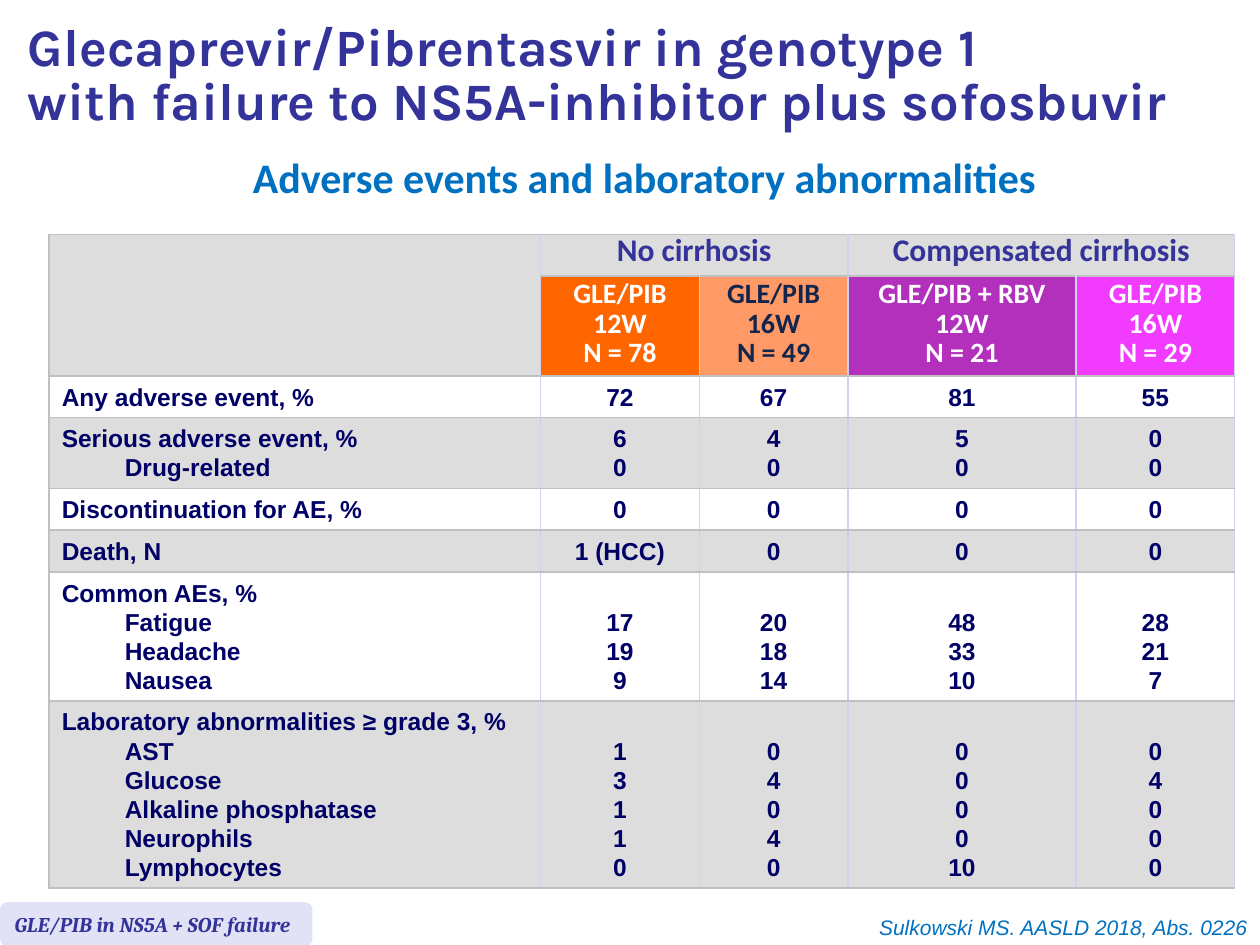
from dataclasses import dataclass

from lxml import etree
from pptx import Presentation
from pptx.dml.color import RGBColor
from pptx.enum.shapes import MSO_SHAPE
from pptx.enum.text import MSO_ANCHOR, MSO_AUTO_SIZE, PP_ALIGN
from pptx.oxml.ns import qn
from pptx.util import Inches, Pt

LEFT, CENTER, RIGHT = PP_ALIGN.LEFT, PP_ALIGN.CENTER, PP_ALIGN.RIGHT
MIDDLE, BOTTOM = MSO_ANCHOR.MIDDLE, MSO_ANCHOR.BOTTOM
TITLE_ONLY = 5


@dataclass(frozen=True)
class TextStyle:
    font: str
    size: int
    color: str
    bold: bool = True
    italic: bool = False


class Theme:
    title = TextStyle("Karla", 30, "333399")
    subtitle = TextStyle("Calibri", 24, "0070C0")
    group = TextStyle("Calibri", 18, "333399")
    arm_light = TextStyle("Calibri", 16, "FFFFFF")
    arm_dark = TextStyle("Calibri", 16, "12254C")
    body = TextStyle("Arial", 14, "000066")
    tag = TextStyle("Cambria", 12, "333399", italic=True)
    citation = TextStyle("Arial", 12, "0070C0", bold=False, italic=True)
    white, gray, tag_fill = "FFFFFF", "DDDDDD", "E2E2F6"
    row_line, column_line = "C0C0C0", "D0D0F0"
    line_spacing = Pt(16.6)


TITLE = "Glecaprevir/Pibrentasvir in genotype 1 \vwith failure to NS5A-inhibitor plus sofosbuvir"
SUBTITLE = "Adverse events and laboratory abnormalities"
TAG = "GLE/PIB in NS5A + SOF failure"
CITATION = "Sulkowski MS. AASLD 2018, Abs. 0226"

GROUPS = ["No cirrhosis", "Compensated cirrhosis"]
ARMS = [
    (["GLE/PIB", "12W", "N = 78"], "FF6600", Theme.arm_light),
    (["GLE/PIB", "16W", "N = 49"], "FF9966", Theme.arm_dark),
    (["GLE/PIB + RBV", "12W", "N = 21"], "B230BC", Theme.arm_light),
    (["GLE/PIB", "16W", "N = 29"], "F13BFE", Theme.arm_light),
]
# Each row: heading, indented labels, one list of values per arm
ROWS = [
    ("Any adverse event, %", [], [["72"], ["67"], ["81"], ["55"]]),
    ("Serious adverse event, %", ["Drug-related"],
     [["6", "0"], ["4", "0"], ["5", "0"], ["0", "0"]]),
    ("Discontinuation for AE, %", [], [["0"], ["0"], ["0"], ["0"]]),
    ("Death, N", [], [["1 (HCC)"], ["0"], ["0"], ["0"]]),
    ("Common AEs, %", ["Fatigue", "Headache", "Nausea"],
     [["17", "19", "9"], ["20", "18", "14"], ["48", "33", "10"], ["28", "21", "7"]]),
    ("Laboratory abnormalities ≥ grade 3, %",
     ["AST", "Glucose", "Alkaline phosphatase", "Neurophils", "Lymphocytes"],
     [["1", "3", "1", "1", "0"], ["0", "4", "0", "4", "0"],
      ["0", "0", "0", "0", "10"], ["0", "4", "0", "0", "0"]]),
]
COLUMN_WIDTHS = [3.9, 1.26, 1.18, 1.81, 1.26]


def color(value):
    return RGBColor.from_string(value)


def write(text_frame, lines, style, alignment, spacing=None):
    text_frame.text = "\n".join(lines)
    for paragraph in text_frame.paragraphs:
        paragraph.alignment = alignment
        paragraph.line_spacing = spacing
        for run in paragraph.runs:
            run.font.name = style.font
            run.font.size = Pt(style.size)
            run.font.bold = style.bold
            run.font.italic = style.italic
            run.font.color.rgb = color(style.color)


def style_cell(cell, fill, first_column):
    """Borders go in before the fill, as the schema orders them."""
    properties = cell._tc.get_or_add_tcPr()
    left = Theme.row_line if first_column else Theme.column_line
    borders = {"L": left, "R": Theme.column_line, "T": Theme.row_line, "B": Theme.row_line}
    for side, line_color in borders.items():
        line = etree.SubElement(properties, qn(f"a:ln{side}"), w=str(Pt(1)))
        solid = etree.SubElement(line, qn("a:solidFill"))
        etree.SubElement(solid, qn("a:srgbClr"), val=line_color)
    cell.fill.solid()
    cell.fill.fore_color.rgb = color(fill)


def fill_cell(cell, lines, style, alignment=CENTER, anchor=MIDDLE):
    write(cell.text_frame, lines, style, alignment, Theme.line_spacing)
    cell.vertical_anchor = anchor


def add_events_table(slide):
    line_counts = [1, 3] + [1 + len(labels) for _, labels, _ in ROWS]
    heights = [Theme.line_spacing * count + Inches(0.1) for count in line_counts]
    frame = slide.shapes.add_table(
        len(heights), len(COLUMN_WIDTHS), Inches(0.39), Inches(1.86),
        Inches(sum(COLUMN_WIDTHS)), sum(heights))
    table = frame.table
    table.first_row = table.horz_banding = False
    for column, width in zip(table.columns, COLUMN_WIDTHS):
        column.width = Inches(width)
    for row, height in zip(table.rows, heights):
        row.height = height

    arm_fills = [Theme.gray] + [fill for _, fill, _ in ARMS]
    for row_index in range(len(heights)):
        for column_index in range(len(COLUMN_WIDTHS)):
            fill = Theme.white if row_index and row_index % 2 == 0 else Theme.gray
            if row_index == 1:
                fill = arm_fills[column_index]
            style_cell(table.cell(row_index, column_index), fill, column_index == 0)

    table.cell(0, 0).merge(table.cell(1, 0))
    for index, group in enumerate(GROUPS):
        first = 1 + 2 * index
        table.cell(0, first).merge(table.cell(0, first + 1))
        fill_cell(table.cell(0, first), [group], Theme.group)
    for column_index, (lines, _, style) in enumerate(ARMS, 1):
        fill_cell(table.cell(1, column_index), lines, style)

    for row_index, (heading, labels, values) in enumerate(ROWS, 2):
        label_cell = table.cell(row_index, 0)
        fill_cell(label_cell, [heading, *labels], Theme.body, LEFT)
        for paragraph in label_cell.text_frame.paragraphs[1:]:
            paragraph.level = 1
            paragraph._p.get_or_add_pPr().set("marL", str(Inches(0.5)))
        for column_index, lines in enumerate(values, 1):
            anchor = BOTTOM if len(lines) <= len(labels) else MIDDLE
            fill_cell(table.cell(row_index, column_index), lines, Theme.body, anchor=anchor)


def add_text(slide, box, text, style, alignment, spacing=None):
    text_box = slide.shapes.add_textbox(*map(Inches, box))
    text_box.text_frame.word_wrap = True
    write(text_box.text_frame, [text], style, alignment, spacing)


def add_title(slide):
    title = slide.shapes.title
    title.left, title.top, title.width, title.height = map(Inches, (0.12, 0.08, 9.88, 1.07))
    title.text_frame.auto_size = MSO_AUTO_SIZE.NONE
    title.text_frame.vertical_anchor = MIDDLE
    write(title.text_frame, [TITLE], Theme.title, LEFT, 0.85)


def add_tag(slide):
    tag = slide.shapes.add_shape(
        MSO_SHAPE.ROUNDED_RECTANGLE, *map(Inches, (0, 7.16, 2.48, 0.35)))
    tag.shadow.inherit = False
    tag.fill.solid()
    tag.fill.fore_color.rgb = color(Theme.tag_fill)
    tag.line.fill.background()
    tag.text_frame.margin_right = 0
    tag.text_frame.vertical_anchor = MIDDLE
    write(tag.text_frame, [TAG], Theme.tag, LEFT)


def main():
    presentation = Presentation()
    presentation.slide_width, presentation.slide_height = Inches(10), Inches(7.5)
    slide = presentation.slides.add_slide(presentation.slide_layouts[TITLE_ONLY])
    add_events_table(slide)
    add_text(slide, (0.39, 1.34, 9.45, 0.35), SUBTITLE, Theme.subtitle, CENTER, Pt(15.2))
    add_title(slide)
    add_tag(slide)
    add_text(slide, (2.64, 7.21, 7.36, 0.3), CITATION, Theme.citation, RIGHT)
    presentation.save("out.pptx")


if __name__ == "__main__":
    main()
